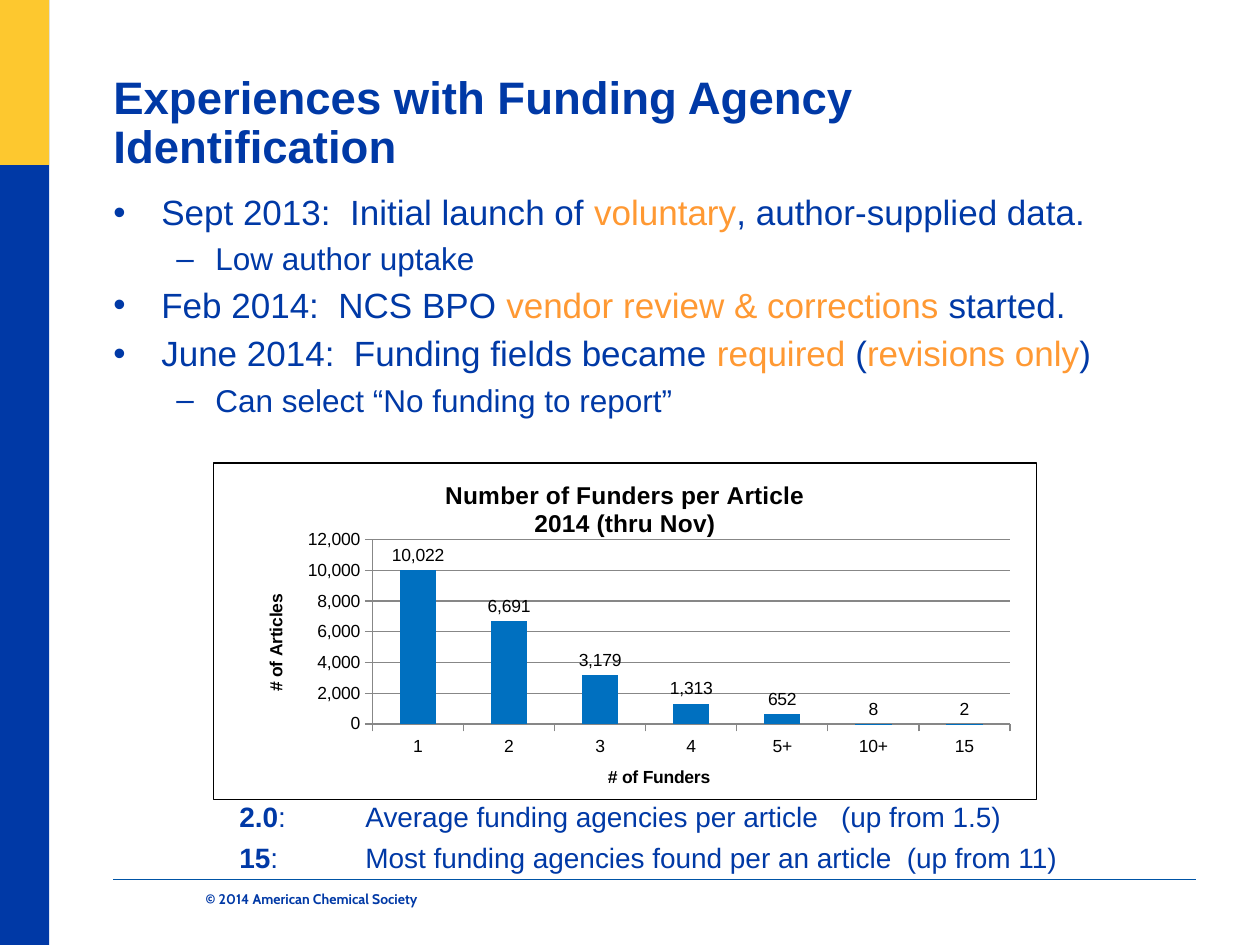
from lxml.etree import SubElement
from pptx import Presentation
from pptx.chart.data import CategoryChartData
from pptx.dml.color import RGBColor
from pptx.enum.chart import XL_CHART_TYPE, XL_LABEL_POSITION, XL_TICK_MARK
from pptx.enum.shapes import MSO_CONNECTOR, MSO_SHAPE
from pptx.enum.text import MSO_ANCHOR, MSO_AUTO_SIZE, PP_ALIGN
from pptx.oxml import parse_xml
from pptx.oxml.ns import nsdecls, qn
from pptx.util import Inches, Pt

BLUE, YELLOW, ORANGE, BLACK = "0039A6", "FDC82F", "FF9933", "000000"
RULE, COLUMN, GRID = "0054A6", "0070C0", "878787"
WIDTH, HEIGHT = 10, 7.5
LEFT = 0.9

TITLE = "Experiences with Funding Agency Identification"
COPYRIGHT = "© 2014 American Chemical Society"
LEVELS = {
    0: {"size": 20, "margin": 0.38, "indent": -0.38, "bullet": "•"},
    1: {"size": 18, "margin": 0.81, "indent": -0.31, "bullet": "–"},
    2: {"size": 16, "margin": 2, "indent": -1, "bullet": None},
}
BODY = [
    (0, 0, [("Sept 2013:  Initial launch of ", {}), ("voluntary", {"color": ORANGE}),
            (", author-supplied data.", {})]),
    (1, 0, [("Low author uptake", {})]),
    (0, 0, [("Feb 2014:  NCS BPO ", {}),
            ("vendor review & corrections ", {"color": ORANGE}), ("started.", {})]),
    (0, 0, [("June 2014:  Funding fields became ", {}), ("required", {"color": ORANGE}),
            (" (", {}), ("revisions only", {"color": ORANGE}), (")", {})]),
    (1, 0, [("Can select “No funding to report”", {})]),
    (2, 214, [("2.0", {"bold": True}),
              (":\tAverage funding agencies per article   (up from 1.5)", {})]),
    (2, 0, [("15", {"bold": True}),
            (":\tMost funding agencies found per an article  (up from 11)", {})]),
]
CHART_TITLE = ["Number of Funders per Article", "2014 (thru Nov)"]
FUNDERS = {"1": 10022, "2": 6691, "3": 3179, "4": 1313, "5+": 652, "10+": 8, "15": 2}
PLOT = {"x": 0.193, "y": 0.228, "w": 0.775, "h": 0.548}


def rgb(value):
    """Turn a hex string into a colour."""
    return RGBColor.from_string(value)


def style_font(font, size, color=BLUE, bold=False, name="Arial"):
    """Apply size, weight, face and colour to a font."""
    for key, value in {"size": Pt(size), "bold": bold, "name": name}.items():
        setattr(font, key, value)
    font.color.rgb = rgb(color)


def add_run(paragraph, text, **style):
    """Add one styled run."""
    run = paragraph.add_run()
    run.text = text
    style_font(run.font, **style)


def set_frame(shape, box, anchor=MSO_ANCHOR.TOP):
    """Place a text shape and return its frame without insets."""
    for key, value in zip(("left", "top", "width", "height"), box):
        setattr(shape, key, Inches(value))
    frame = shape.text_frame
    settings = {"margin_left": 0, "margin_right": 0, "margin_top": 0, "margin_bottom": 0,
                "word_wrap": True, "auto_size": MSO_AUTO_SIZE.NONE,
                "vertical_anchor": anchor}
    for key, value in settings.items():
        setattr(frame, key, value)
    return frame


def space(paragraph, before, after):
    """Set the spacing and left alignment of a paragraph."""
    settings = {"line_spacing": 0.9, "space_before": Pt(before),
                "space_after": Pt(after), "alignment": PP_ALIGN.LEFT}
    for key, value in settings.items():
        setattr(paragraph, key, value)


def add_band(slide, height, color):
    """Draw a colour band down the left edge."""
    band = slide.shapes.add_shape(MSO_SHAPE.RECTANGLE, 0, 0, Inches(0.39), Inches(height))
    band.shadow.inherit = False
    band.fill.solid()
    band.fill.fore_color.rgb = rgb(color)
    band.line.fill.background()


def add_rule(slide):
    """Draw the line above the footer."""
    rule = slide.shapes.add_connector(MSO_CONNECTOR.STRAIGHT, Inches(LEFT), Inches(6.98),
                                      Inches(9.49), Inches(6.98))
    rule.line.color.rgb = rgb(RULE)
    rule.line.width = Pt(0.75)
    SubElement(rule._element.spPr, qn("a:effectLst"))


def fill_title(slide):
    """Write the slide title."""
    frame = set_frame(slide.shapes.title, (LEFT, 0.35, 6.14, 1.03), MSO_ANCHOR.BOTTOM)
    space(frame.paragraphs[0], 0, 0)
    add_run(frame.paragraphs[0], TITLE, size=26, bold=True)


def fill_body(slide):
    """Write the bullets and the two summary lines."""
    frame = set_frame(slide.placeholders[1], (LEFT, 1.55, 8.6, 5.15))
    for index, (level, before, runs) in enumerate(BODY):
        paragraph = frame.add_paragraph() if index else frame.paragraphs[0]
        form = LEVELS[level]
        paragraph.level = level
        properties = paragraph._p.get_or_add_pPr()
        properties.set("marL", str(Inches(form["margin"])))
        properties.set("indent", str(Inches(form["indent"])))
        properties.set("defTabSz", str(Inches(1)))
        if form["bullet"]:
            SubElement(properties, qn("a:buChar")).set("char", form["bullet"])
        else:
            SubElement(properties, qn("a:buNone"))
        space(paragraph, before, 6)
        for text, style in runs:
            add_run(paragraph, text, size=form["size"], **style)


def add_footer(slide):
    """Write the copyright line."""
    frame = set_frame(slide.shapes.add_textbox(0, 0, 0, 0), (0.89, 7.07, 3.17, 0.31))
    frame.paragraphs[0].alignment = PP_ALIGN.CENTER
    add_run(frame.paragraphs[0], COPYRIGHT, size=8, bold=True, name="Cabin")


def style_axis(axis, title):
    """Give an axis its title, ticks and line."""
    axis.major_tick_mark = XL_TICK_MARK.OUTSIDE
    axis.minor_tick_mark = XL_TICK_MARK.NONE
    axis.format.line.color.rgb = rgb(GRID)
    add_run(axis.axis_title.text_frame.paragraphs[0], title, size=10, color=BLACK, bold=True)


def frame_chart(chart):
    """Set the plot position and the chart border."""
    area = chart._chartSpace.chart.plotArea
    for old in area.findall(qn("c:layout")):
        area.remove(old)
    modes = "".join(f'<c:{key}Mode val="edge"/>' for key in "xy")
    sizes = "".join(f'<c:{key} val="{value}"/>' for key, value in PLOT.items())
    area.insert(0, parse_xml(
        f'<c:layout {nsdecls("c")}><c:manualLayout><c:layoutTarget val="inner"/>'
        f'{modes}{sizes}</c:manualLayout></c:layout>'))
    chart._chartSpace.chart.addnext(parse_xml(
        f'<c:spPr {nsdecls("c", "a")}><a:noFill/><a:ln w="{Pt(0.75)}"><a:solidFill>'
        f'<a:srgbClr val="{BLACK}"/></a:solidFill></a:ln></c:spPr>'))


def add_funder_chart(slide):
    """Add the column chart of funders per article."""
    data = CategoryChartData(number_format="#,##0")
    data.categories = list(FUNDERS)
    data.add_series("Series 1", list(FUNDERS.values()))
    chart = slide.shapes.add_chart(XL_CHART_TYPE.COLUMN_CLUSTERED, Inches(1.69), Inches(3.67),
                                   Inches(6.54), Inches(2.68), data).chart
    style_font(chart.font, 10, BLACK)
    chart.has_legend = False
    title = chart.chart_title.text_frame
    for index, text in enumerate(CHART_TITLE):
        paragraph = title.add_paragraph() if index else title.paragraphs[0]
        add_run(paragraph, text, size=14, color=BLACK, bold=True)
    style_axis(chart.category_axis, "# of Funders")
    style_axis(chart.value_axis, "# of Articles")
    for key, value in {"minimum_scale": 0, "maximum_scale": 12000, "major_unit": 2000}.items():
        setattr(chart.value_axis, key, value)
    chart.value_axis.tick_labels.number_format = "#,##0"
    chart.value_axis.tick_labels.number_format_is_linked = False
    chart.value_axis.major_gridlines.format.line.color.rgb = rgb(GRID)
    plot = chart.plots[0]
    plot.gap_width = 150
    plot.vary_by_categories = False
    plot.has_data_labels = True
    labels = {"show_value": True, "number_format": "#,##0", "number_format_is_linked": False,
              "position": XL_LABEL_POSITION.OUTSIDE_END}
    for key, value in labels.items():
        setattr(plot.data_labels, key, value)
    fill = plot.series[0].format.fill
    fill.solid()
    fill.fore_color.rgb = rgb(COLUMN)
    frame_chart(chart)


def main():
    """Build and save the slide."""
    presentation = Presentation()
    presentation.slide_width, presentation.slide_height = Inches(WIDTH), Inches(HEIGHT)
    slide = presentation.slides.add_slide(presentation.slide_layouts[1])
    add_band(slide, HEIGHT, BLUE)
    add_band(slide, 1.31, YELLOW)
    add_rule(slide)
    fill_title(slide)
    fill_body(slide)
    add_footer(slide)
    add_funder_chart(slide)
    presentation.save("out.pptx")


if __name__ == "__main__":
    main()
